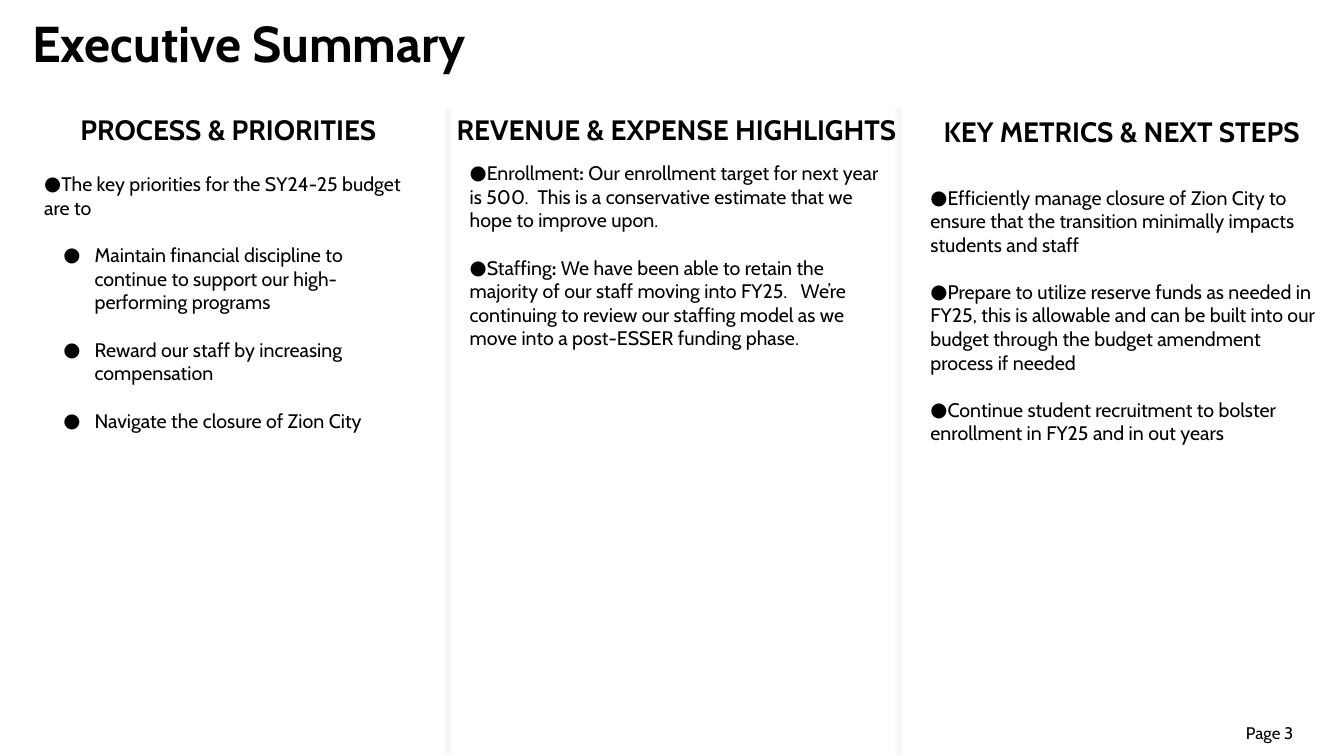
from lxml import etree
from pptx import Presentation
from pptx.dml.color import RGBColor
from pptx.enum.shapes import MSO_SHAPE
from pptx.enum.text import PP_ALIGN
from pptx.oxml.ns import qn
from pptx.util import Inches, Pt

RECT = MSO_SHAPE.RECTANGLE
LEFT, CENTER = PP_ALIGN.LEFT, PP_ALIGN.CENTER
BLACK, GREY = "000000", "D9D9D9"
TITLE = {"size": Pt(36), "bold": True}
HEAD = {"size": Pt(20), "bold": True}
BODY = {"size": Pt(14), "bold": False}
STRONG = {"size": Pt(14), "bold": True}
FOOT = {"size": Pt(12), "bold": False}
GAP = Pt(17)

HEADS = [
    ("PROCESS & PRIORITIES", (0.22, 1.07, 4.09, 0.44)),
    ("REVENUE & EXPENSE HIGHLIGHTS", (4.32, 1.07, 4.78, 0.44)),
    ("KEY METRICS & NEXT STEPS", (9.08, 1.09, 4.09, 0.44)),
]
GOALS = [
    (0, [("The key priorities for the SY24-25 budget are to", BODY)]),
    (1, [("Maintain financial discipline to continue to support our "
          "high-performing programs", BODY)]),
    (1, [("Reward our staff by increasing compensation", BODY)]),
    (1, [("Navigate the closure of Zion City", BODY)]),
]
FUNDS = [
    (0, [("Enrollment", BODY), (": ", STRONG),
         ("Our enrollment target for next year is 500.  This is a "
          "conservative estimate that we hope to improve upon.", BODY)]),
    (0, [("Staffing", BODY), (":", STRONG),
         (" We have been able to retain the majority of our staff moving "
          "into FY25.   We’re continuing to review our staffing model as we "
          "move into a post-ESSER funding phase.", BODY)]),
]
STEPS = [
    (0, [("Efficiently manage closure of Zion City to ensure that the "
          "transition minimally impacts students and staff", BODY)]),
    (0, [("Prepare to utilize reserve funds as needed in FY25, this is "
          "allowable and can be built into our budget through the budget "
          "amendment process if needed", BODY)]),
    (0, [("Continue student recruitment to bolster enrollment in FY25 and in "
          "out years", BODY)]),
]
LISTS = [
    (GOALS, (0.34, 1.66, 3.74, 2.93)),
    (FUNDS, (4.56, 1.55, 4.38, 2.46)),
    (STEPS, (9.13, 1.79, 4.09, 2.69)),
]


def color(code):
    """Turn a hex string into a colour."""
    return RGBColor.from_string(code)


def add_box(slide, area):
    """Add a wrapping text box and return its frame."""
    frame = slide.shapes.add_textbox(*map(Inches, area)).text_frame
    frame.word_wrap = True
    return frame


def add_run(para, text, style):
    """Add a run of text in the given style."""
    run = para.add_run()
    run.text = text
    for key, value in {"name": "Cabin", **style}.items():
        setattr(run.font, key, value)
    run.font.color.rgb = color(BLACK)


def add_line(slide, text, area, style, align=LEFT):
    """Add a text box with a single line."""
    para = add_box(slide, area).paragraphs[0]
    para.alignment = align
    add_run(para, text, style)


def set_bullet(para, level):
    """Give a paragraph a hanging round bullet."""
    para.level = level
    props = para._p.get_or_add_pPr()
    props.set("marL", str(Inches(0.5 * level)))
    props.set("indent", str(Inches(-0.31)))
    tint = etree.SubElement(props, qn("a:buClr"))
    etree.SubElement(tint, qn("a:srgbClr"), val=BLACK)
    etree.SubElement(props, qn("a:buFont"), typeface="Cabin")
    etree.SubElement(props, qn("a:buChar"), char="●")


def add_list(slide, items, area):
    """Add a box of evenly spaced bulleted items."""
    frame = add_box(slide, area)
    for index, (level, runs) in enumerate(items):
        para = frame.add_paragraph() if index else frame.paragraphs[0]
        para.space_before = GAP if index else Pt(0)
        set_bullet(para, level)
        for text, style in runs:
            add_run(para, text, style)


def add_bar(slide, left):
    """Add a pale bar between two columns."""
    area = (left, 1.07, 0.07, 6.42)
    bar = slide.shapes.add_shape(RECT, *map(Inches, area))
    bar.shadow.inherit = False
    bar.fill.solid()
    bar.fill.fore_color.rgb = color(GREY)
    bar.line.fill.background()
    tint = bar._element.spPr.find(qn("a:solidFill"))[0]
    etree.SubElement(tint, qn("a:alpha"), val="20000")


def main():
    """Build the summary slide and save it."""
    deck = Presentation()
    deck.slide_width, deck.slide_height = Inches(13.33), Inches(7.5)
    slide = deck.slides.add_slide(deck.slide_layouts[6])
    add_line(slide, "Page 3", (12.26, 7.12, 0.87, 0.3), FOOT)
    add_line(slide, "Executive Summary", (0.22, 0.07, 13.11, 0.71), TITLE)
    for left in (4.41, 8.88):
        add_bar(slide, left)
    for text, area in HEADS:
        add_line(slide, text, area, HEAD, CENTER)
    for items, area in LISTS:
        add_list(slide, items, area)
    deck.save("out.pptx")


if __name__ == "__main__":
    main()
